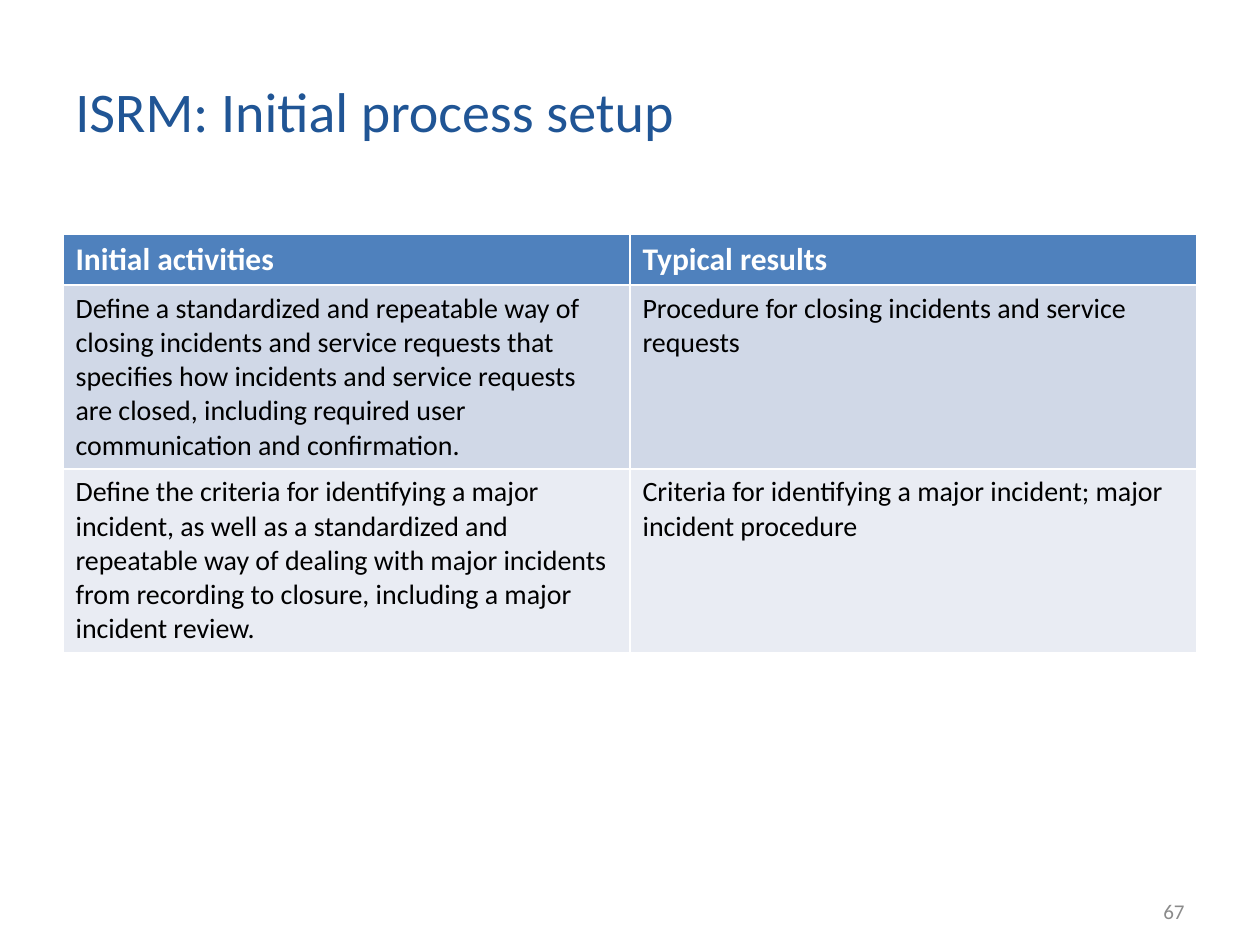
from pptx import Presentation
from pptx.dml.color import RGBColor
from pptx.enum.text import MSO_ANCHOR, PP_ALIGN
from pptx.util import Pt

HUES = {"title": "205595", "head": "4F81BD", "odd": "D0D8E7",
        "even": "E9ECF3", "white": "FFFFFF", "black": "000000",
        "gray": "8B8B8B"}


def style(para, size, hue, bold=False):
    font = para.font
    font.name = "Calibri"
    font.size = Pt(size)
    font.bold = bold
    font.color.rgb = RGBColor.from_string(HUES[hue])


def label(text, left, top, width, height, size, hue, align):
    box = slide.shapes.add_textbox(Pt(left), Pt(top), Pt(width), Pt(height))
    frame = box.text_frame
    frame.word_wrap = True
    frame.vertical_anchor = MSO_ANCHOR.MIDDLE
    para = frame.paragraphs[0]
    para.text = text
    para.alignment = align
    style(para, size, hue)


deck = Presentation()
deck.slide_width, deck.slide_height = Pt(720), Pt(540)
slide = deck.slides.add_slide(deck.slide_layouts[6])

label("ISRM: Initial process setup", 36, 21.6, 579, 82.8, 32, "title",
      PP_ALIGN.LEFT)

rows = [
    (29, "head", 18, "white",
     ["Initial activities", "Typical results"]),
    (105, "odd", 16, "black",
     ["Define a standardized and repeatable way of closing incidents and "
      "service requests that specifies how incidents and service requests "
      "are closed, including required user communication and confirmation.",
      "Procedure for closing incidents and service requests"]),
    (105, "even", 16, "black",
     ["Define the criteria for identifying a major incident, as well as a "
      "standardized and repeatable way of dealing with major incidents from "
      "recording to closure, including a major incident review.",
      "Criteria for identifying a major incident; major incident procedure"]),
]
total = sum(row[0] for row in rows)
table = slide.shapes.add_table(len(rows), 2, Pt(36), Pt(134), Pt(648),
                               Pt(total)).table
for r, (height, fill, size, hue, texts) in enumerate(rows):
    table.rows[r].height = Pt(height)
    for c, text in enumerate(texts):
        cell = table.cell(r, c)
        cell.text = text
        cell.fill.solid()
        cell.fill.fore_color.rgb = RGBColor.from_string(HUES[fill])
        style(cell.text_frame.paragraphs[0], size, hue, r == 0)

label("67", 516, 506, 168, 28.8, 12, "gray", PP_ALIGN.RIGHT)

deck.save("out.pptx")
